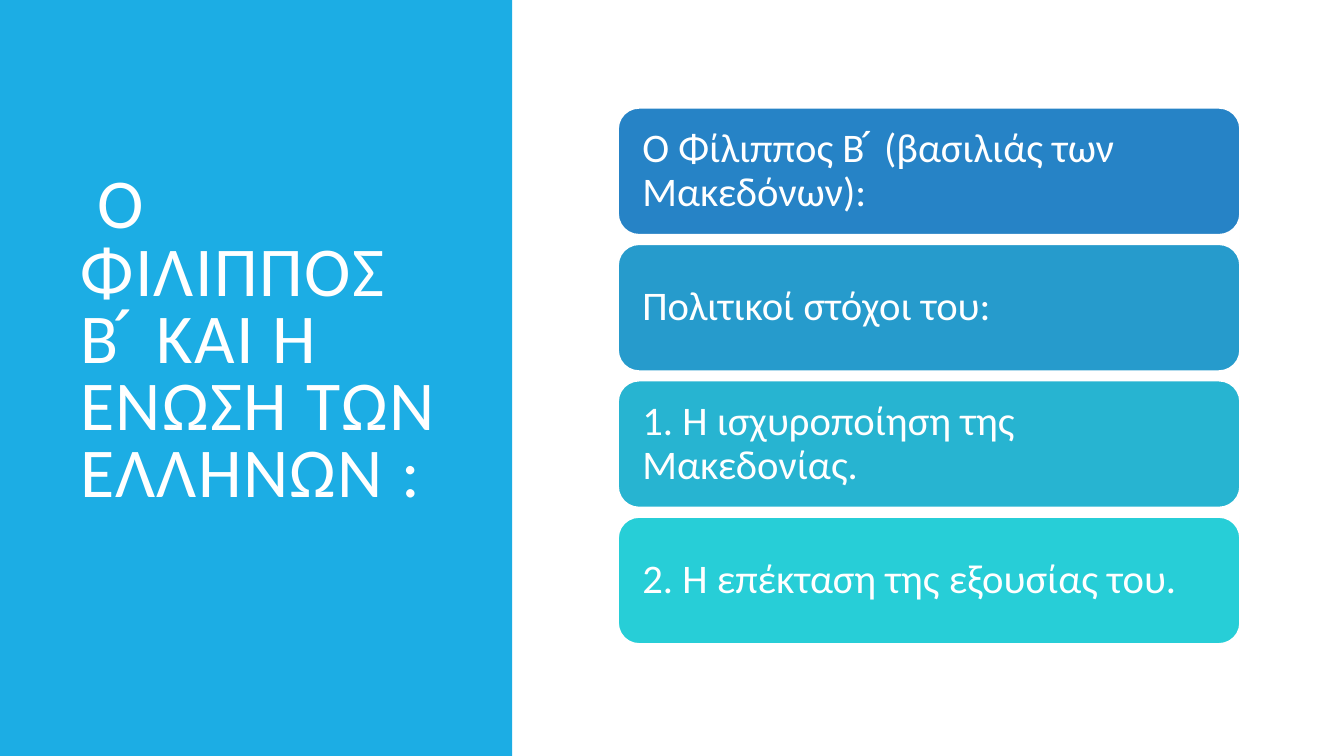
"""Build a slide on Philip II with a title panel and four stacked cards."""
import pptx
import pptx.dml.color
import pptx.enum.shapes
import pptx.enum.text
import pptx.util

Inches = pptx.util.Inches
Pt = pptx.util.Pt
RGBColor = pptx.dml.color.RGBColor
MSO_SHAPE = pptx.enum.shapes.MSO_SHAPE

WHITE = RGBColor(0xFF, 0xFF, 0xFF)
PANEL_BLUE = RGBColor(0x1C, 0xAD, 0xE4)
FONT = "Calibri"

TITLE = " Ο ΦΙΛΙΠΠΟΣ Β ́ ΚΑΙ Η ΕΝΩΣΗ ΤΩΝ ΕΛΛΗΝΩΝ :"
CARDS = [
    ("Ο Φίλιππος Β ́ (βασιλιάς των Μακεδόνων):", RGBColor(0x26, 0x83, 0xC6)),
    ("Πολιτικοί στόχοι του:", RGBColor(0x26, 0x9B, 0xCC)),
    ("1. Η ισχυροποίηση της Μακεδονίας.", RGBColor(0x27, 0xB4, 0xD1)),
    ("2. Η επέκταση της εξουσίας του.", RGBColor(0x27, 0xCE, 0xD7)),
]
CARD_LEFT, CARD_TOP, CARD_WIDTH, CARD_HEIGHT = 6.13, 1.07, 6.17, 1.26
CARD_PITCH = 1.353
CARD_INSET = 0.18


def add_box(slide, kind, left, top, width, height, fill):
    shape = slide.shapes.add_shape(
        kind, Inches(left), Inches(top), Inches(width), Inches(height))
    shape.shadow.inherit = False
    shape.fill.solid()
    shape.fill.fore_color.rgb = fill
    shape.line.fill.background()
    return shape


def write_text(shape, text, size, line_spacing):
    frame = shape.text_frame
    frame.word_wrap = True
    frame.vertical_anchor = pptx.enum.text.MSO_ANCHOR.MIDDLE
    paragraph = frame.paragraphs[0]
    paragraph.alignment = pptx.enum.text.PP_ALIGN.LEFT
    paragraph.line_spacing = line_spacing
    run = paragraph.add_run()
    run.text = text
    run.font.name = FONT
    run.font.size = Pt(size)
    run.font.color.rgb = WHITE
    return run


def main():
    presentation = pptx.Presentation()
    presentation.slide_width = Inches(13.33)
    presentation.slide_height = Inches(7.5)
    slide = presentation.slides.add_slide(presentation.slide_layouts[6])

    add_box(slide, MSO_SHAPE.RECTANGLE, 0, 0, 5.08, 7.5, PANEL_BLUE)
    title = slide.shapes.add_textbox(
        Inches(0.7), Inches(0.7), Inches(3.74), Inches(5.41))
    title_run = write_text(title, TITLE, 50, 0.8)
    title_run.font._element.set("spc", "100")

    for index, (text, color) in enumerate(CARDS):
        card = add_box(slide, MSO_SHAPE.ROUNDED_RECTANGLE, CARD_LEFT,
                       CARD_TOP + index * CARD_PITCH, CARD_WIDTH, CARD_HEIGHT, color)
        card.line.color.rgb = WHITE
        card.line.width = Pt(1.25)
        card.text_frame.margin_left = card.text_frame.margin_right = Inches(CARD_INSET)
        card.text_frame.margin_top = card.text_frame.margin_bottom = Inches(CARD_INSET)
        write_text(card, text, 29, 0.9)

    presentation.save("out.pptx")


if __name__ == "__main__":
    main()
